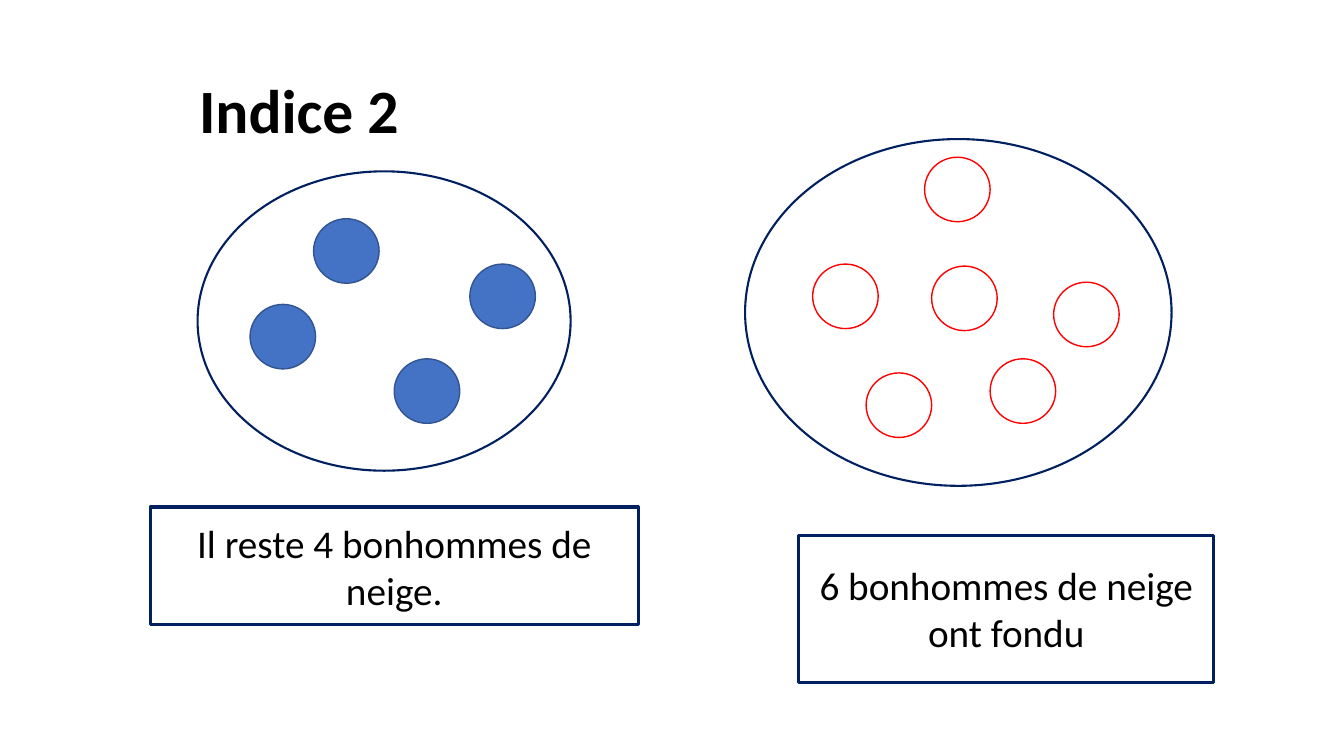
import pptx
import pptx.util
from pptx.dml.color import RGBColor
from pptx.enum.shapes import MSO_SHAPE
from pptx.enum.text import MSO_ANCHOR, PP_ALIGN

PX = 9144  # EMU per px, 100 px to the inch
FONT = "Calibri"
BLACK = RGBColor(0x00, 0x00, 0x00)
WHITE = RGBColor(0xFF, 0xFF, 0xFF)
NAVY = RGBColor(0x00, 0x20, 0x60)
BLUE = RGBColor(0x44, 0x72, 0xC4)
DARK_BLUE = RGBColor(0x32, 0x54, 0x91)
RED = RGBColor(0xFF, 0x00, 0x00)

DOT_W, DOT_H = 65, 64
REMAINING = [(311, 217), (248, 302), (466, 262), (391, 356)]
MELTED = [(982, 356), (1045, 280), (924, 264), (917, 156), (806, 262), (859, 370)]


def emu(*lengths):
    return [n * PX for n in lengths]


def write(sp, text, size, bold=False):
    tf = sp.text_frame
    tf.word_wrap = True
    tf.vertical_anchor = MSO_ANCHOR.MIDDLE
    p = tf.paragraphs[0]
    p.text = text
    p.alignment = PP_ALIGN.CENTER
    font = p.runs[0].font
    font.name, font.size, font.bold = FONT, pptx.util.Pt(size), bold
    font.color.rgb = BLACK
    return p


def add_title(s, box, text):
    sp = s.shapes.add_textbox(*emu(*box))
    write(sp, text, 44, bold=True).line_spacing = 0.9


def add_outlined(s, kind, box, fill, line, width):
    sp = s.shapes.add_shape(kind, *emu(*box))
    sp.shadow.inherit = False
    sp.fill.solid()
    sp.fill.fore_color.rgb = fill
    sp.line.color.rgb = line
    sp.line.width = pptx.util.Pt(width)
    return sp


def add_group(s, oval, dots, fill, line):
    """A large oval with the dots it holds."""
    add_outlined(s, MSO_SHAPE.OVAL, oval, WHITE, NAVY, 1.5)
    for x, y in dots:
        add_outlined(s, MSO_SHAPE.OVAL, (x, y, DOT_W, DOT_H), fill, line, 1)


def add_caption(s, box, text):
    sp = add_outlined(s, MSO_SHAPE.RECTANGLE, box, WHITE, NAVY, 2.25)
    write(sp, text, 28)


def main():
    prs = pptx.Presentation()
    prs.slide_width, prs.slide_height = emu(1333, 750)
    s = prs.slides.add_slide(prs.slide_layouts[6])

    # The trailing space is part of the centred title
    add_title(s, (92, 40, 423, 145), "Indice 2 ")

    # Snowmen that remain
    add_group(s, (196, 170, 370, 297), REMAINING, BLUE, DARK_BLUE)
    add_caption(s, (149, 503, 484, 117), "Il reste 4 bonhommes de neige.")

    # Snowmen that melted
    add_group(s, (739, 138, 423, 344), MELTED, WHITE, RED)
    add_caption(s, (792, 531, 412, 146), "6 bonhommes de neige ont fondu")

    prs.save("out.pptx")


if __name__ == "__main__":
    main()
